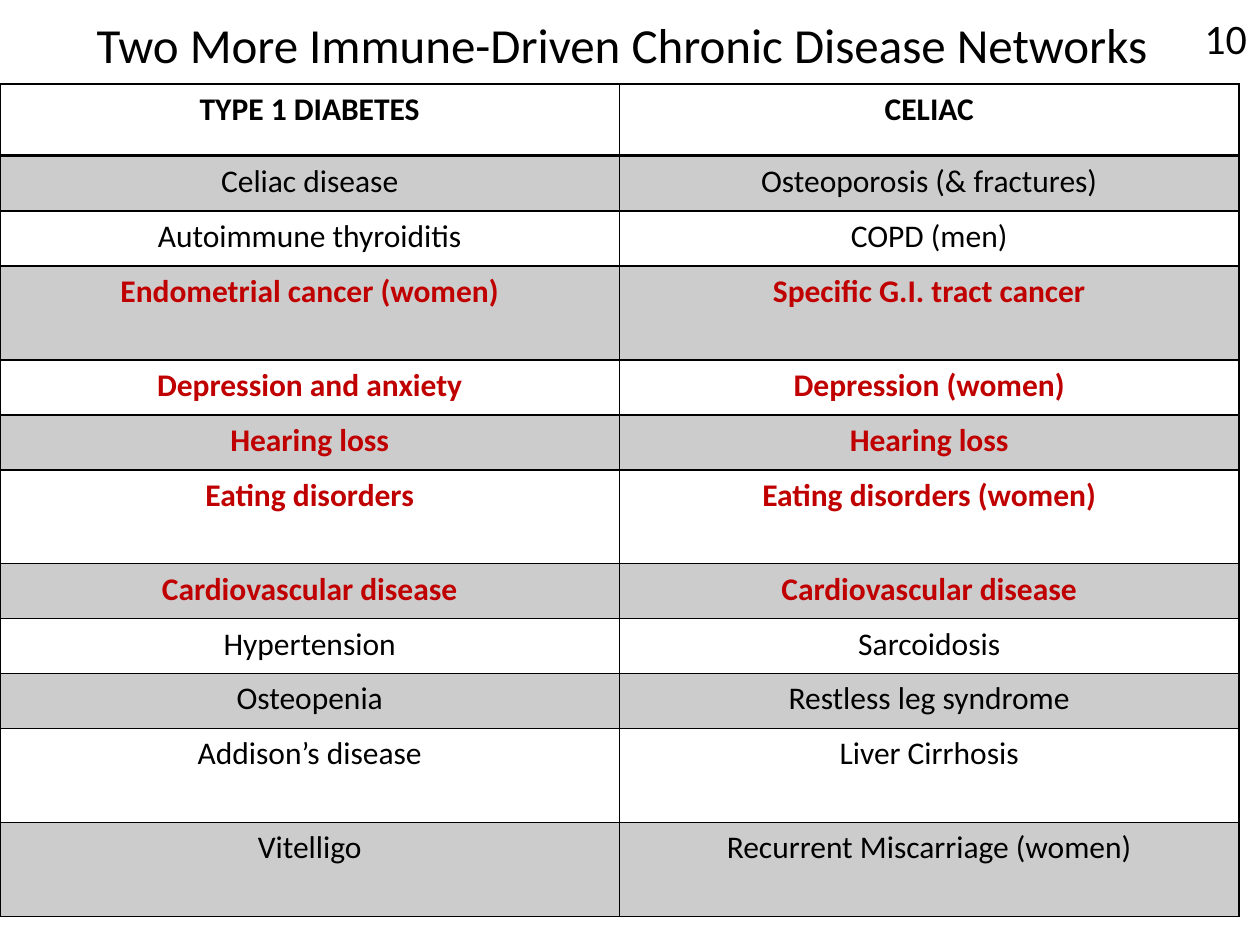
from dataclasses import dataclass

from lxml.etree import SubElement
from pptx import Presentation
from pptx.dml.color import RGBColor
from pptx.enum.text import MSO_ANCHOR, MSO_AUTO_SIZE, PP_ALIGN
from pptx.oxml import parse_xml
from pptx.oxml.ns import nsdecls, qn
from pptx.util import Emu, Pt

TITLE = "Two More Immune-Driven Chronic Disease Networks"
PAGE_NUMBER = "10"
HEADERS = ("TYPE 1 DIABETES", "CELIAC")
# (type 1 diabetes, celiac, shared by both, tall row)
DISEASES = [
    ("Celiac disease", "Osteoporosis (& fractures)", False, False),
    ("Autoimmune thyroiditis", "COPD (men)", False, False),
    ("Endometrial cancer (women)", "Specific G.I. tract cancer", True, True),
    ("Depression and anxiety", "Depression (women)", True, False),
    ("Hearing loss", "Hearing loss", True, False),
    ("Eating disorders", "Eating disorders (women)", True, True),
    ("Cardiovascular disease", "Cardiovascular disease", True, False),
    ("Hypertension", "Sarcoidosis", False, False),
    ("Osteopenia", "Restless leg syndrome", False, False),
    ("Addison’s disease", "Liver Cirrhosis", False, True),
    ("Vitelligo", "Recurrent Miscarriage (women)", False, True),
]


@dataclass(frozen=True)
class Theme:
    font: str = "Calibri"
    ink: RGBColor = RGBColor(0, 0, 0)
    shared: RGBColor = RGBColor(0xC0, 0, 0)
    band_alpha: int = 20
    title: int = 28
    number: int = 24
    body: int = 18


THEME = Theme()
COLUMN_WIDTH = 619.5
TABLE_TOP = 84
HEADER_HEIGHT, ROW_HEIGHT, TALL_HEIGHT = 72, 55, 94


def px(value):
    return Emu(round(value * 914400 / 126))


def style(paragraph, size, color=THEME.ink, bold=False, align=PP_ALIGN.LEFT):
    paragraph.alignment = align
    font = paragraph.font
    font.name, font.size, font.bold = THEME.font, Pt(size), bold
    font.color.rgb = color


def set_line(shape, text, size, left, top, width, height):
    """Place a single unwrapped line of text."""
    shape.left, shape.top, shape.width, shape.height = map(px, (left, top, width, height))
    frame = shape.text_frame
    frame.text = text
    frame.word_wrap = False
    frame.auto_size = MSO_AUTO_SIZE.SHAPE_TO_FIT_TEXT
    frame.vertical_anchor = MSO_ANCHOR.TOP
    style(frame.paragraphs[0], size)


def set_borders(cell, top, bottom):
    properties = cell._tc.get_or_add_tcPr()
    widths = {"lnL": 1, "lnR": 1, "lnT": top, "lnB": bottom}
    for index, (side, width) in enumerate(widths.items()):
        properties.insert(index, parse_xml(
            f'<a:{side} {nsdecls("a")} w="{Pt(width)}"><a:solidFill>'
            f'<a:srgbClr val="{THEME.ink}"/></a:solidFill></a:{side}>'))


def shade(cell):
    cell.fill.solid()
    cell.fill.fore_color.rgb = THEME.ink
    color = cell._tc.tcPr.find(f".//{qn('a:srgbClr')}")
    SubElement(color, qn("a:alpha"), val=str(THEME.band_alpha * 1000))


def add_disease_table(slide):
    heights = [HEADER_HEIGHT] + [TALL_HEIGHT if tall else ROW_HEIGHT
                                 for *_, tall in DISEASES]
    table = slide.shapes.add_table(
        len(heights), len(HEADERS), 0, px(TABLE_TOP),
        px(COLUMN_WIDTH * len(HEADERS)), px(sum(heights))).table
    table.first_row = table.horz_banding = False
    for column in table.columns:
        column.width = px(COLUMN_WIDTH)

    rows = [(*HEADERS, False, True)] + DISEASES
    for index, (*names, shared, _) in enumerate(rows):
        table.rows[index].height = px(heights[index])
        for cell, name in zip(table.rows[index].cells, names):
            cell.text = name
            style(cell.text_frame.paragraphs[0], THEME.body,
                  THEME.shared if shared else THEME.ink,
                  bold=shared or index == 0, align=PP_ALIGN.CENTER)
            if index % 2:
                shade(cell)
            else:
                cell.fill.background()
            set_borders(cell, top=2 if index == 1 else 1,
                        bottom=2 if index == 0 else 1)


def main():
    presentation = Presentation()
    presentation.slide_width, presentation.slide_height = px(1260), px(945)
    slide = presentation.slides.add_slide(presentation.slide_layouts[5])
    add_disease_table(slide)
    set_line(slide.shapes.title, TITLE, THEME.title, 84, 8, 1087, 72)
    number = slide.shapes.add_textbox(0, 0, 0, 0)
    set_line(number, PAGE_NUMBER, THEME.number, 1192, 6, 68, 63)
    presentation.save("out.pptx")


if __name__ == "__main__":
    main()
